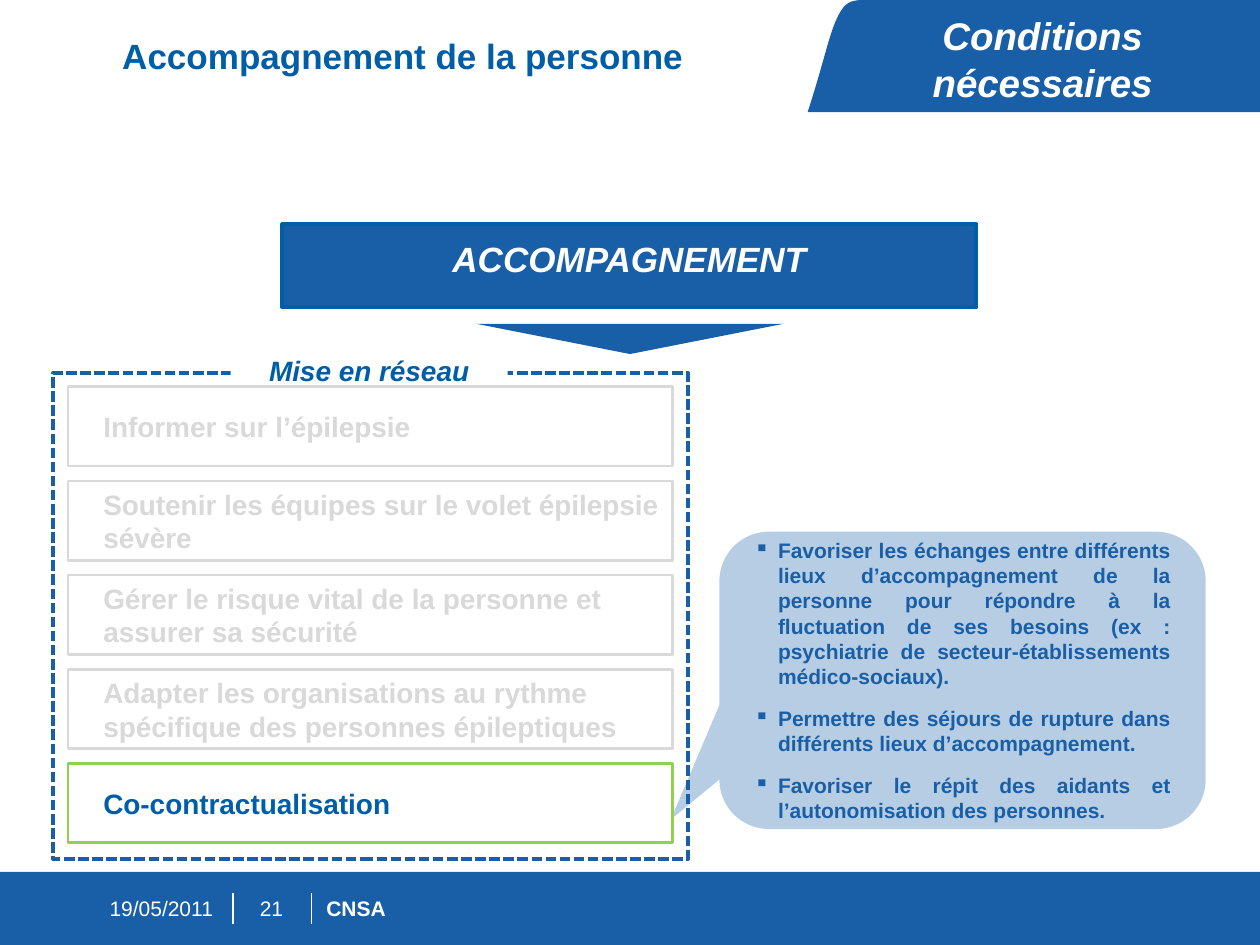
from pptx import Presentation
from pptx.dml.color import RGBColor
from pptx.enum.dml import MSO_LINE
from pptx.enum.shapes import MSO_CONNECTOR, MSO_SHAPE
from pptx.enum.text import MSO_ANCHOR, MSO_AUTO_SIZE, PP_ALIGN
from pptx.oxml.ns import qn
from pptx.util import Inches, Pt
from lxml import etree

RECT, TRI = MSO_SHAPE.RECTANGLE, MSO_SHAPE.ISOSCELES_TRIANGLE
CALL = MSO_SHAPE.ROUNDED_RECTANGULAR_CALLOUT
LEFT, MID, JUST = PP_ALIGN.LEFT, PP_ALIGN.CENTER, PP_ALIGN.JUSTIFY
TOP, HALF = MSO_ANCHOR.TOP, MSO_ANCHOR.MIDDLE
BLUE, DEEP, GREY, LIME, WHITE = "195FA7", "005EA7", "D9D9D9", "92D050", "FFFFFF"
rgb = RGBColor.from_string

prs = Presentation()
prs.slide_width, prs.slide_height = Inches(10), Inches(7.5)
slide = prs.slides.add_slide(prs.slide_layouts[5])
shapes = slide.shapes


def paint(shape, fill=None, line=None, width=1):
    """Set fill and outline, and drop the shadow."""
    shape.shadow.inherit = False
    if fill:
        shape.fill.solid()
        shape.fill.fore_color.rgb = rgb(fill)
    else:
        shape.fill.background()
    if line:
        shape.line.color.rgb = rgb(line)
        shape.line.width = Pt(width)
    else:
        shape.line.fill.background()
    return shape


def write(shape, lines, color, align=LEFT, anchor=HALF, pads=(0, 0, 0, 0), **font):
    """Fill a shape with paragraphs in one format."""
    frame = shape.text_frame
    frame.auto_size = MSO_AUTO_SIZE.NONE
    frame.word_wrap = True
    frame.vertical_anchor = anchor
    for side, pad in zip(("left", "top", "right", "bottom"), pads):
        setattr(frame, f"margin_{side}", Inches(pad))
    frame.text = "\n".join(lines)
    for para in frame.paragraphs:
        para.alignment = align
        for run in para.runs:
            run.font.name = "Arial"
            run.font.color.rgb = rgb(color)
            for key, value in font.items():
                setattr(run.font, key, value)
    return frame.paragraphs


# Corner tab, its left edge made of two curves
curves = [
    [(6.86, 0), (6.74, 0), (6.73, 0.03), (6.7, 0.05)],
    [(6.7, 0.05), (6.59, 0.19), (6.57, 0.4), (6.41, 0.89)],
]
edge = [(6.86, 0)]
for a, b, c, d in curves:
    for step in range(1, 13):
        t = step / 12
        u = 1 - t
        edge.append(tuple(
            u**3 * a[n] + 3 * u * u * t * b[n] + 3 * u * t * t * c[n] + t**3 * d[n]
            for n in (0, 1)))
pen = shapes.build_freeform(Inches(10), 0)
pen.add_line_segments([(Inches(x), Inches(y)) for x, y in edge + [(10, 0.89)]])
paint(pen.convert_to_shape(), BLUE)

# Footer
paint(shapes.add_shape(RECT, 0, Inches(6.92), Inches(10), Inches(0.58)), BLUE)
for x in (1.85, 2.47):
    rule = shapes.add_connector(MSO_CONNECTOR.STRAIGHT, Inches(x), Inches(7.09),
                                Inches(x), Inches(7.33))
    rule.line.color.rgb = rgb(WHITE)
    rule.line.width = Pt(0.75)
    etree.SubElement(rule.element.spPr, qn("a:effectLst"))
for x, w, text, align, bold in (
    (0.87, 0.87, "19/05/2011", LEFT, False),
    (1.96, 0.39, "21", MID, False),
    (2.59, 4.38, "CNSA", LEFT, True),
):
    box = shapes.add_textbox(Inches(x), Inches(7.07), Inches(w), Inches(0.27))
    write(box, [text], WHITE, align, size=Pt(12), bold=bold)

# Title and tab heading
title = shapes.title
title.left, title.top = Inches(0.87), Inches(0.25)
title.width, title.height = Inches(5.43), Inches(0.39)
paras = write(title, ["Accompagnement de la personne"], DEEP, LEFT, TOP,
              (0.1, 0.05, 0.1, 0.05), size=Pt(20), bold=True)
paras[0].line_spacing = 0.95
box = shapes.add_textbox(Inches(6.82), Inches(0.05), Inches(2.91), Inches(0.39))
write(box, ["Conditions nécessaires"], WHITE, MID, TOP, (0.1, 0.05, 0.1, 0.05),
      size=Pt(22), bold=True, italic=True)

# Banner and arrow below it
banner = shapes.add_shape(RECT, Inches(2.24), Inches(1.78), Inches(5.51), Inches(0.66))
paint(banner, BLUE, DEEP, 2.25)
paras = write(banner, ["ACCOMPAGNEMENT"], WHITE, MID, pads=(0.16,) * 4,
              size=Pt(20), bold=True, italic=True)
paras[0].line_spacing = Pt(16)
arrow = shapes.add_shape(TRI, Inches(3.78), Inches(2.57), Inches(2.44), Inches(0.24))
paint(arrow, BLUE).rotation = 180

# Callout
call = shapes.add_shape(CALL, Inches(5.71), Inches(4.22), Inches(3.86), Inches(2.36))
for n, value in enumerate((-0.6, 0.468, 0.167)):
    call.adjustments[n] = value
paint(call, BLUE)
tint = call.element.spPr.find(qn("a:solidFill"))[0]
etree.SubElement(tint, qn("a:alpha"), val="31000")
paras = write(call, [
    "Favoriser les échanges entre différents lieux d’accompagnement de la personne "
    "pour répondre à la fluctuation de ses besoins (ex : psychiatrie de "
    "secteur-établissements médico-sociaux).",
    "Permettre des séjours de rupture dans différents lieux d’accompagnement.",
    "Favoriser le répit des aidants et l’autonomisation des personnes.",
], BLUE, JUST, pads=(0.16,) * 4, size=Pt(12), bold=True)
for n, para in enumerate(paras):
    if n:
        para.space_before = Pt(9.6)
    props = para._p.get_or_add_pPr()
    props.set("marL", str(Inches(0.19)))
    props.set("indent", str(-Inches(0.19)))
    etree.SubElement(props, qn("a:buChar"), char="▪")

# Steps, the last one in focus
steps = [
    "Informer sur l’épilepsie",
    "Soutenir les équipes sur le volet épilepsie sévère",
    "Gérer le risque vital de la personne et assurer sa sécurité",
    "Adapter les organisations au rythme spécifique des personnes épileptiques",
    "Co-contractualisation",
]
last = len(steps) - 1
gap = (6.06 - 3.07) / last
for n, text in enumerate(steps):
    line, color = (LIME, DEEP) if n == last else (GREY, GREY)
    step = shapes.add_shape(RECT, Inches(0.54), Inches(3.07 + n * gap),
                            Inches(4.8), Inches(0.63))
    paint(step, WHITE, line, 1.5)
    write(step, [text], color, pads=(0.28, 0, 0.04, 0), size=Pt(16), bold=True)

# Dashed frame and its label
frame = shapes.add_shape(RECT, Inches(0.42), Inches(2.96), Inches(5.04), Inches(3.86))
paint(frame, None, BLUE, 2).line.dash_style = MSO_LINE.SQUARE_DOT
label = shapes.add_shape(RECT, Inches(1.83), Inches(2.84), Inches(2.2), Inches(0.2))
paint(label, WHITE)
write(label, ["Mise en réseau"], DEEP, MID, pads=(0.16, 0, 0.16, 0),
      size=Pt(16), bold=True, italic=True)

prs.save("out.pptx")
